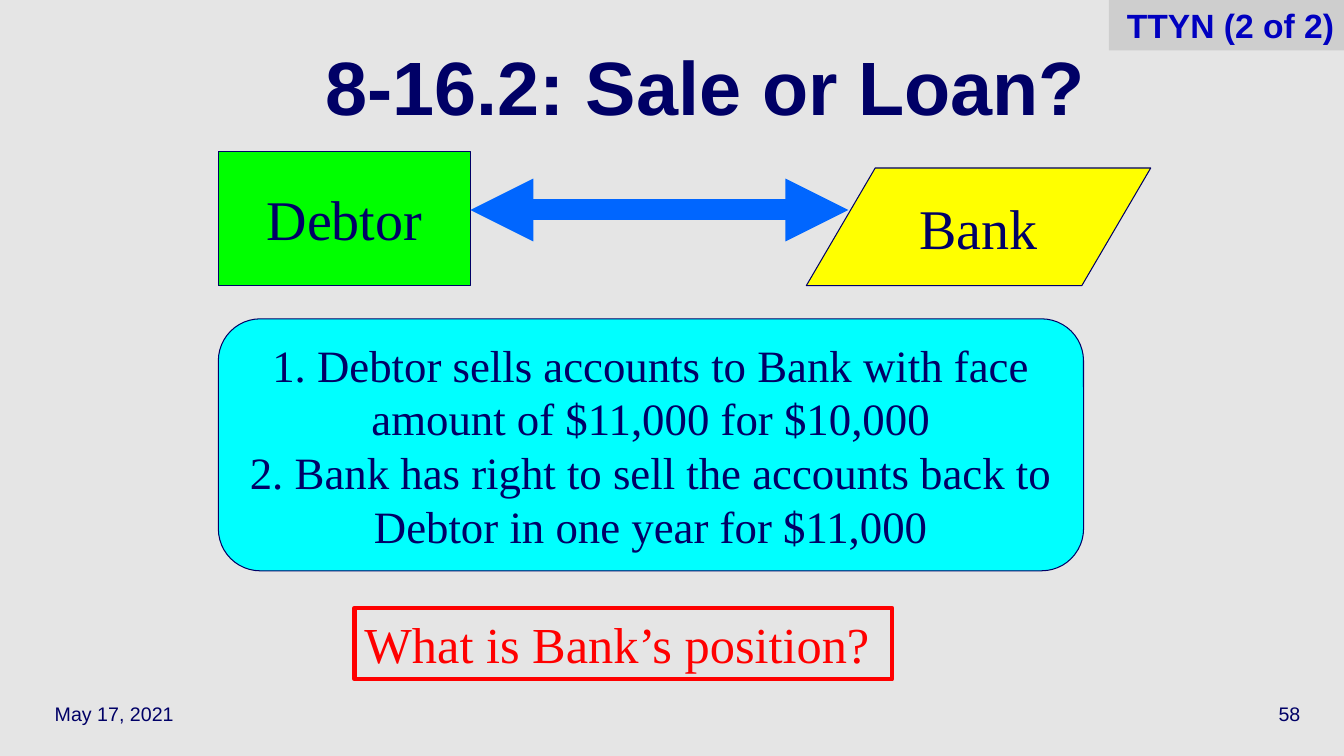
from lxml.etree import SubElement
from pptx import Presentation
from pptx.dml.color import RGBColor
from pptx.enum.shapes import MSO_CONNECTOR, MSO_SHAPE
from pptx.enum.text import MSO_ANCHOR, PP_ALIGN
from pptx.oxml.ns import qn
from pptx.util import Pt

HUES = {
    "back": "E5E5E5", "tag": "CECECE", "navy": "000066", "blue": "0000C0",
    "arrow": "0066FF", "lime": "00FF00", "gold": "FFFF00", "aqua": "00FFFF",
    "red": "FF0000",
}
SANS, SERIF = "Arial", "Times New Roman"
LEFT, MID, RIGHT = PP_ALIGN.LEFT, PP_ALIGN.CENTER, PP_ALIGN.RIGHT


def hue(name):
    return RGBColor.from_string(HUES[name])


def write(shape, text, size, face, tint, align, bold=False, wrap=True):
    frame = shape.text_frame
    frame.text = text
    frame.word_wrap = wrap
    frame.vertical_anchor = MSO_ANCHOR.MIDDLE
    for para in frame.paragraphs:
        para.alignment = align
        for run in para.runs:
            run.font.size = Pt(size)
            run.font.name = face
            run.font.bold = bold
            run.font.color.rgb = hue(tint)


deck = Presentation()
deck.slide_width, deck.slide_height = Pt(960), Pt(540)
slide = deck.slides.add_slide(deck.slide_layouts[5])
slide.background.fill.solid()
slide.background.fill.fore_color.rgb = hue("back")

# Date and page number
for text, left, align in (("May 17, 2021", 32, LEFT), ("58", 736, RIGHT)):
    box = slide.shapes.add_textbox(Pt(left), Pt(492), Pt(200), Pt(36))
    write(box, text, 14, SANS, "navy", align)

# Title
title = slide.shapes.title
title.left, title.top, title.width, title.height = Pt(64), Pt(24), Pt(880), Pt(90)
write(title, "8-16.2: Sale or Loan?", 54, SANS, "navy", MID, bold=True)
title.text_frame.paragraphs[0].line_spacing = 0.7

# Parties, terms, question and corner tag
TERMS = (
    "1. Debtor sells accounts to Bank with face amount of $11,000 for $10,000\n"
    "2. Bank has right to sell the accounts back to Debtor in one year for $11,000"
)
# kind, place, fill, line, line width, text, size, font, text colour, align, bold, wrap
parts = (
    (MSO_SHAPE.FLOWCHART_DATA, (576, 120, 246, 84), "gold", "navy", 0.75,
     "Bank", 40, SERIF, "navy", MID, False, False),
    (MSO_SHAPE.FLOWCHART_PROCESS, (156, 108, 180, 96), "lime", "navy", 0.75,
     "Debtor", 40, SERIF, "navy", MID, False, False),
    (MSO_SHAPE.FLOWCHART_ALTERNATE_PROCESS, (156, 227.75, 618, 180), "aqua", "navy", 0.75,
     TERMS, 32, SERIF, "navy", MID, False, True),
    (MSO_SHAPE.RECTANGLE, (253.25, 434.25, 384, 51), None, "red", 3,
     "What is Bank’s position?", 36, SERIF, "red", LEFT, False, True),
    (MSO_SHAPE.RECTANGLE, (792, 0, 168, 36), "tag", None, 0,
     "TTYN (2 of 2)", 24, SANS, "blue", RIGHT, True, True),
)
for kind, place, fill, edge, width, *words in parts:
    shape = slide.shapes.add_shape(kind, *[Pt(n) for n in place])
    shape.shadow.inherit = False
    if fill:
        shape.fill.solid()
        shape.fill.fore_color.rgb = hue(fill)
    else:
        shape.fill.background()
    if edge:
        shape.line.color.rgb = hue(edge)
        shape.line.width = Pt(width)
    else:
        shape.line.fill.background()
    write(shape, *words)

# Two-way arrow between the parties
arrow = slide.shapes.add_connector(
    MSO_CONNECTOR.STRAIGHT, Pt(336), Pt(150), Pt(606), Pt(150))
arrow.line.color.rgb = hue("arrow")
arrow.line.width = Pt(15)
for end in ("a:headEnd", "a:tailEnd"):
    SubElement(arrow.line._get_or_add_ln(), qn(end), type="triangle")
SubElement(arrow._element.spPr, qn("a:effectLst"))

deck.save("out.pptx")
